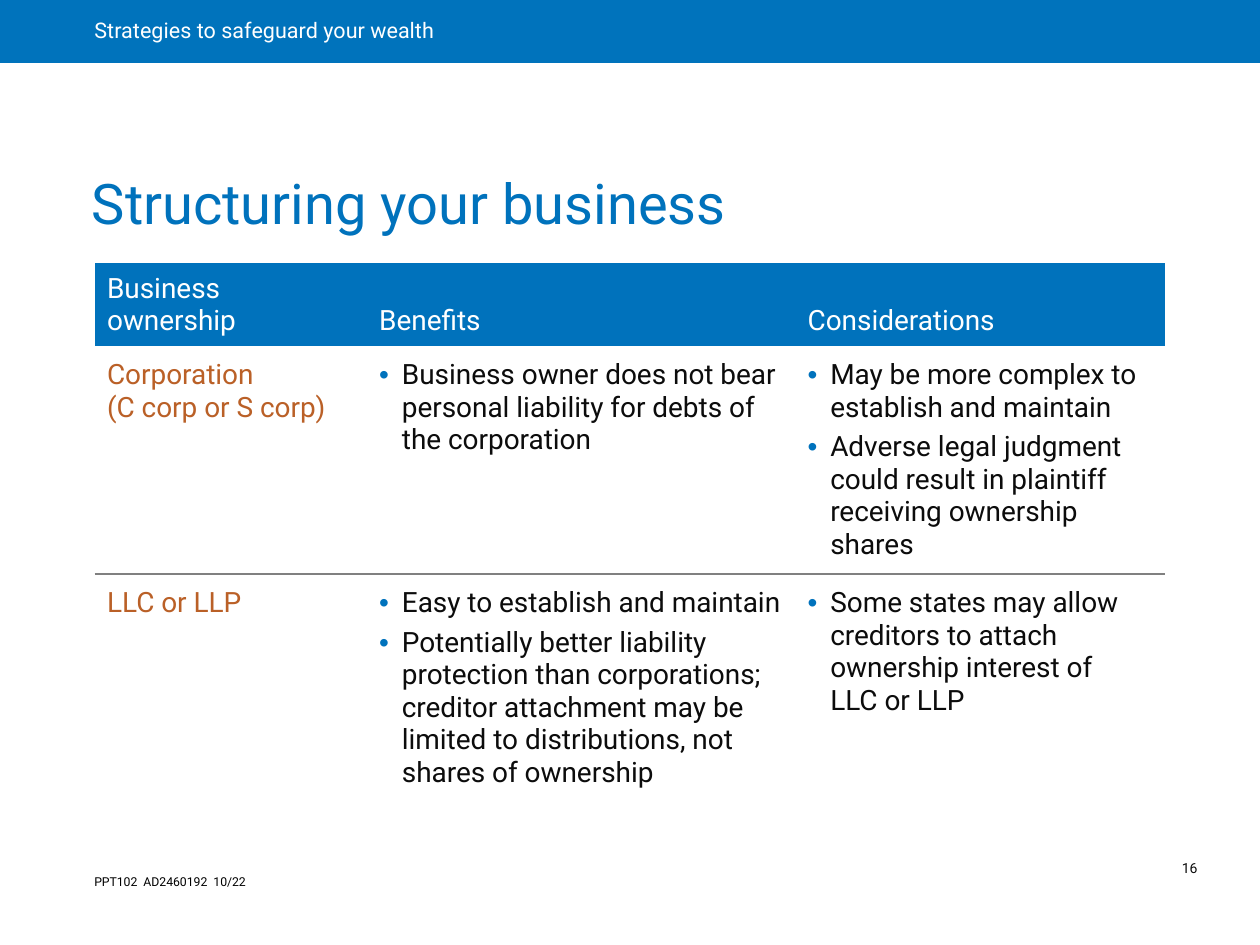
from copy import deepcopy
from dataclasses import dataclass

from lxml.etree import SubElement
from pptx import Presentation
from pptx.dml.color import RGBColor as RGB
from pptx.enum.shapes import MSO_SHAPE as SHAPE
from pptx.enum.text import MSO_ANCHOR as ANCHOR, MSO_AUTO_SIZE as AUTOSIZE, PP_ALIGN as ALIGN
from pptx.oxml import parse_xml
from pptx.oxml.ns import nsdecls, qn
from pptx.util import Inches, Pt


@dataclass(frozen=True)
class Theme:
    font: str = "Roboto"
    blue: str = "0072BC"
    bar: str = "0073BC"
    rust: str = "BA6027"
    ink: str = "0C0C0C"
    black: str = "000000"
    white: str = "FFFFFF"
    rule: str = "808080"
    title_size: float = 32
    table_size: float = 16
    bar_size: float = 12.3
    number_size: float = 8
    code_size: float = 7


T = Theme()


def write(box, paragraphs, size, color, inset=(0, 0, 0, 0), anchor=ANCHOR.TOP,
          spacing=None, bullet=False):
    """Fill a text frame or table cell; inset is left, top, right, bottom in inches."""
    tf = getattr(box, "text_frame", box)
    tf.word_wrap = True
    box.vertical_anchor = anchor
    (box.margin_left, box.margin_top,
     box.margin_right, box.margin_bottom) = [Inches(i) for i in inset]
    for i, text in enumerate(paragraphs):
        p = tf.paragraphs[0] if i == 0 else tf.add_paragraph()
        p.text = text
        p.alignment = ALIGN.LEFT
        if spacing:
            p.line_spacing = spacing
        if bullet:
            p.space_after = Pt(4)
            pPr = p._p.get_or_add_pPr()
            pPr.set("marL", str(Inches(0.18)))
            pPr.set("indent", str(-Inches(0.18)))
            SubElement(SubElement(pPr, qn("a:buClr")), qn("a:srgbClr"), val=T.blue)
            SubElement(pPr, qn("a:buFont"), typeface="Arial")
            SubElement(pPr, qn("a:buChar"), char="•")
        for r in p.runs:
            r.font.name, r.font.size = T.font, Pt(size)
            r.font.color.rgb = RGB.from_string(color)
        for br in p._p.findall(qn("a:br")):
            br.append(deepcopy(p.runs[0]._r.rPr))


def add_rule(cell, side):
    """Draw a grey line on one side of a cell: lnT or lnB."""
    cell._tc.get_or_add_tcPr().insert(0, parse_xml(
        f'<a:{side} {nsdecls("a")} w="{Pt(1)}"><a:solidFill>'
        f'<a:srgbClr val="{T.rule}"/></a:solidFill></a:{side}>'))


prs = Presentation()
prs.slide_width, prs.slide_height = Inches(10), Inches(7.5)
s = prs.slides.add_slide(prs.slide_layouts[5])

# Top bar
bar = s.shapes.add_shape(SHAPE.RECTANGLE, 0, 0, prs.slide_width, Inches(0.5))
bar.shadow.inherit = False
bar.fill.solid()
bar.fill.fore_color.rgb = RGB.from_string(T.bar)
bar.line.fill.background()
write(bar.text_frame, ["Strategies to safeguard your wealth"], T.bar_size, T.white,
      inset=(0.75, 0, 0.22, 0), anchor=ANCHOR.MIDDLE, spacing=0.9)

# Title
title = s.shapes.title
title.left, title.top, title.width, title.height = map(Inches, (0.62, 1.24, 8.62, 0.7))
write(title.text_frame, ["Structuring your business"], T.title_size, T.blue,
      inset=(0.11, 0.06, 0.11, 0.06), anchor=ANCHOR.BOTTOM, spacing=0.9)
title.text_frame.auto_size = AUTOSIZE.NONE

# Ownership table
headings = ["Business ownership", "Benefits", "Considerations"]
ownership = [
    (["Corporation ", "(C corp or S corp)"],
     ["Business owner does not bear personal liability for debts of the corporation"],
     ["May be more complex to establish and maintain",
      "Adverse legal judgment could result in plaintiff receiving ownership shares"]),
    (["LLC or LLP"],
     ["Easy to establish and maintain",
      "Potentially better liability protection than corporations; creditor attachment "
      "may be limited to distributions, not shares of ownership"],
     ["Some states may allow creditors to attach\nownership interest of \nLLC or LLP"]),
]
col_widths = [2.16, 3.4, 2.94]
row_heights = [0.65, 1.81, 1.77]
frame = s.shapes.add_table(len(row_heights), len(col_widths), Inches(0.75), Inches(2.09),
                           Inches(sum(col_widths)), Inches(sum(row_heights)))
table = frame.table
table.first_row = table.horz_banding = False
no_style = "{2D5ABB26-0587-4C30-8999-92F81FD0307C}"
table._tbl.tblPr.find(qn("a:tableStyleId")).text = no_style
for col, width in zip(table.columns, col_widths):
    col.width = Inches(width)
for row, height in zip(table.rows, row_heights):
    row.height = Inches(height)

for c, heading in enumerate(headings):
    cell = table.cell(0, c)
    cell.fill.solid()
    cell.fill.fore_color.rgb = RGB.from_string(T.blue)
    write(cell, [heading], T.table_size, T.white,
          inset=(0.1, 0.07, 0.15, 0.07), anchor=ANCHOR.BOTTOM)

for r, entries in enumerate(ownership, start=1):
    for c, paragraphs in enumerate(entries):
        cell = table.cell(r, c)
        cell.fill.background()
        write(cell, paragraphs, T.table_size, T.ink if c else T.rust,
              inset=(0.1, 0.1, 0.1, 0.1), bullet=c > 0)
        add_rule(cell, "lnB" if r == 1 else "lnT")

# Footer
code = s.shapes.add_textbox(Inches(0.65), Inches(6.89), Inches(7.63), Inches(0.22))
write(code.text_frame, ["PPT102  AD2460192  10/22"], T.code_size, T.black,
      inset=(0.1, 0.05, 0.1, 0.05))
number = s.shapes.add_textbox(Inches(9.25), Inches(6.8), Inches(0.5), Inches(0.21))
write(number.text_frame, ["16"], T.number_size, T.ink,
      inset=(0.13, 0.04, 0.04, 0.04), spacing=0.9)

prs.save("out.pptx")
